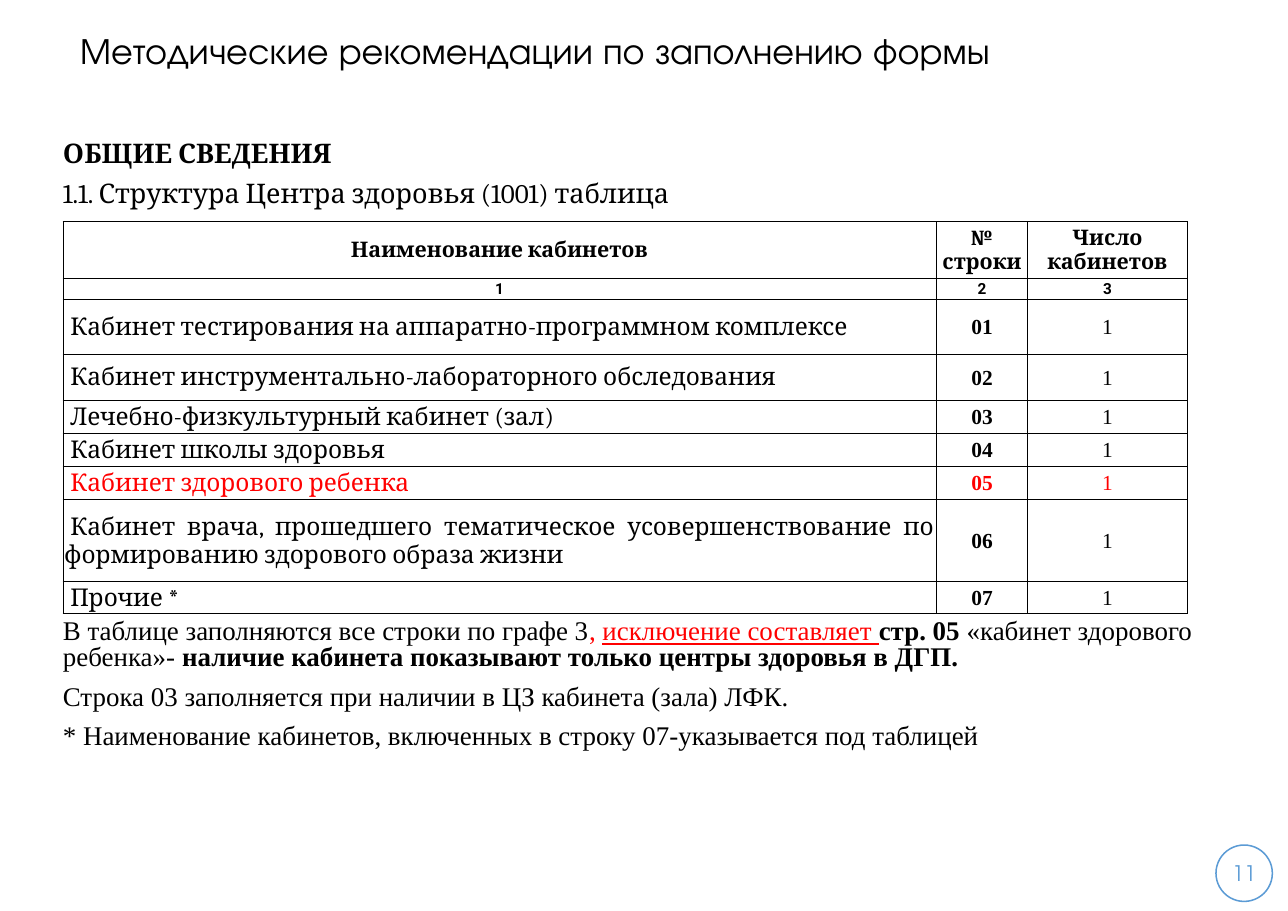
from pptx import Presentation
from pptx.dml.color import RGBColor
from pptx.enum.shapes import MSO_SHAPE
from pptx.enum.text import MSO_ANCHOR, MSO_AUTO_SIZE, PP_ALIGN
from pptx.oxml import parse_xml
from pptx.oxml.ns import nsdecls
from pptx.util import Cm, Pt

BLACK, RED, BLUE = "000000", "FF0000", "5B9BD5"
TITLE_FONT, SERIF, TIMES, SANS = "TeX Gyre Adventor", "Cambria", "Times New Roman", "Roboto"
TEXT_SIZE = 17.6

COLUMN_WIDTHS = [20.14, 2.11, 3.68]
HEADERS = ["Наименование кабинетов", "№ строки", "Число кабинетов"]
HEADER_HEIGHT, NUMBERING_HEIGHT = 1.3, 0.48
ROOMS = [
    ("Кабинет тестирования на аппаратно-программном комплексе", 1.27, BLACK),
    ("Кабинет инструментально-лабораторного обследования", 1.07, BLACK),
    ("Лечебно-физкультурный кабинет (зал)", 0.76, BLACK),
    ("Кабинет школы здоровья", 0.76, BLACK),
    ("Кабинет здорового ребенка", 0.76, RED),
    ("Кабинет врача, прошедшего тематическое усовершенствование по "
     "формированию здорового образа жизни", 1.9, BLACK),
    ("Прочие *", 0.74, BLACK),
]

# Each paragraph is a list of spans: text, bold, colour, underline
HEADING = [
    [("ОБЩИЕ СВЕДЕНИЯ", True, BLACK, False)],
    [("1.1. Структура Центра здоровья (1001) таблица", False, BLACK, False)],
]
NOTES = [
    [("В таблице заполняются все строки по графе 3", False, BLACK, False),
     (", ", False, RED, False),
     ("исключение составляет ", False, RED, True),
     ("стр. 05 ", True, BLACK, False),
     ("«кабинет здорового ребенка»- ", False, BLACK, False),
     ("наличие кабинета показывают только центры здоровья в ДГП.", True, BLACK, False)],
    [("Строка 03 заполняется при наличии в ЦЗ кабинета (зала) ЛФК.", False, BLACK, False)],
    [("* Наименование кабинетов, включенных в строку 07-указывается под таблицей",
      False, BLACK, False)],
]


def color(hex_string):
    return RGBColor.from_string(hex_string)


def format_font(font, name, size, hex_string, bold=False):
    font.name = name
    font.size = Pt(size)
    font.bold = bold
    font.color.rgb = color(hex_string)


def set_margins(target, left=0, top=0, right=0, bottom=0):
    target.margin_left, target.margin_top = Cm(left), Cm(top)
    target.margin_right, target.margin_bottom = Cm(right), Cm(bottom)


def set_title(slide, text):
    title = slide.shapes.title
    title.left, title.top, title.width, title.height = Cm(1.85), Cm(0), Cm(26), Cm(2.41)
    frame = title.text_frame
    frame.text = text
    frame.auto_size = MSO_AUTO_SIZE.NONE
    frame.vertical_anchor = MSO_ANCHOR.MIDDLE
    set_margins(frame, 0, 0.13, 0.25, 0.13)
    para = frame.paragraphs[0]
    para.alignment = PP_ALIGN.LEFT
    para.line_spacing = 0.9
    format_font(para.runs[0].font, TITLE_FONT, 24, BLACK)


def add_text(slide, top, height, paragraphs, font_name):
    box = slide.shapes.add_textbox(Cm(1.45), Cm(top), Cm(26.2), Cm(height))
    frame = box.text_frame
    frame.word_wrap = True
    set_margins(frame)
    for index, spans in enumerate(paragraphs):
        para = frame.add_paragraph() if index else frame.paragraphs[0]
        para.line_spacing = 0.8
        para.space_before = Pt(8.8 if index else 0)
        for text, bold, hex_string, underline in spans:
            span = para.add_run()
            span.text = text
            format_font(span.font, font_name, TEXT_SIZE, hex_string, bold)
            span.font.underline = underline


def add_borders(cell):
    properties = cell._tc.get_or_add_tcPr()
    for side in ("lnL", "lnR", "lnT", "lnB"):
        properties.append(parse_xml(
            f'<a:{side} {nsdecls("a")} w="{Pt(0.5)}"><a:solidFill>'
            f'<a:srgbClr val="{BLACK}"/></a:solidFill></a:{side}>'))


def fill_cell(cell, text, font_name, size, hex_string=BLACK, bold=False,
              alignment=PP_ALIGN.CENTER):
    cell.text_frame.text = text
    cell.vertical_anchor = MSO_ANCHOR.MIDDLE
    set_margins(cell, 0.03, 0.03, 0.03, 0)
    add_borders(cell)
    cell.fill.background()
    para = cell.text_frame.paragraphs[0]
    para.alignment = alignment
    if alignment == PP_ALIGN.JUSTIFY:
        para._p.get_or_add_pPr().set("indent", str(Cm(0.14)))
    format_font(para.runs[0].font, font_name, size, hex_string, bold)


def add_rooms_table(slide):
    heights = [HEADER_HEIGHT, NUMBERING_HEIGHT] + [height for _, height, _ in ROOMS]
    table = slide.shapes.add_table(
        len(heights), len(COLUMN_WIDTHS), Cm(1.45), Cm(5.11),
        Cm(sum(COLUMN_WIDTHS)), Cm(sum(heights))).table
    table.first_row = table.horz_banding = False
    for column, width in zip(table.columns, COLUMN_WIDTHS):
        column.width = Cm(width)
    for row, height in zip(table.rows, heights):
        row.height = Cm(height)

    for index, header in enumerate(HEADERS):
        fill_cell(table.cell(0, index), header, SERIF, 14, bold=True)
        fill_cell(table.cell(1, index), str(index + 1), SANS, 10, bold=True)
    for number, (name, _, hex_string) in enumerate(ROOMS, start=1):
        room, code, count = table.rows[number + 1].cells
        fill_cell(room, name, SERIF, 16, hex_string, alignment=PP_ALIGN.JUSTIFY)
        fill_cell(code, f"{number:02}", TIMES, 14, hex_string, bold=True)
        fill_cell(count, "1", TIMES, 14, hex_string)


def add_page_number(slide, number):
    circle = slide.shapes.add_shape(MSO_SHAPE.OVAL, Cm(28.04), Cm(19.48), Cm(1.3), Cm(1.3))
    circle.shadow.inherit = False
    circle.fill.background()
    circle.line.color.rgb = color(BLUE)
    circle.line.width = Pt(1)
    frame = circle.text_frame
    frame.text = number
    frame.vertical_anchor = MSO_ANCHOR.MIDDLE
    set_margins(frame)
    para = frame.paragraphs[0]
    para.alignment = PP_ALIGN.CENTER
    format_font(para.runs[0].font, TITLE_FONT, 14, BLUE)


def main():
    deck = Presentation()
    deck.slide_width, deck.slide_height = Cm(29.7), Cm(21)
    page = deck.slides.add_slide(deck.slide_layouts.get_by_name("Title Only"))
    add_page_number(page, "11")
    set_title(page, "Методические рекомендации по заполнению формы")
    add_text(page, 3.3, 1.7, HEADING, SERIF)
    add_text(page, 14.3, 3.5, NOTES, TIMES)
    add_rooms_table(page)
    deck.save("out.pptx")


if __name__ == "__main__":
    main()
